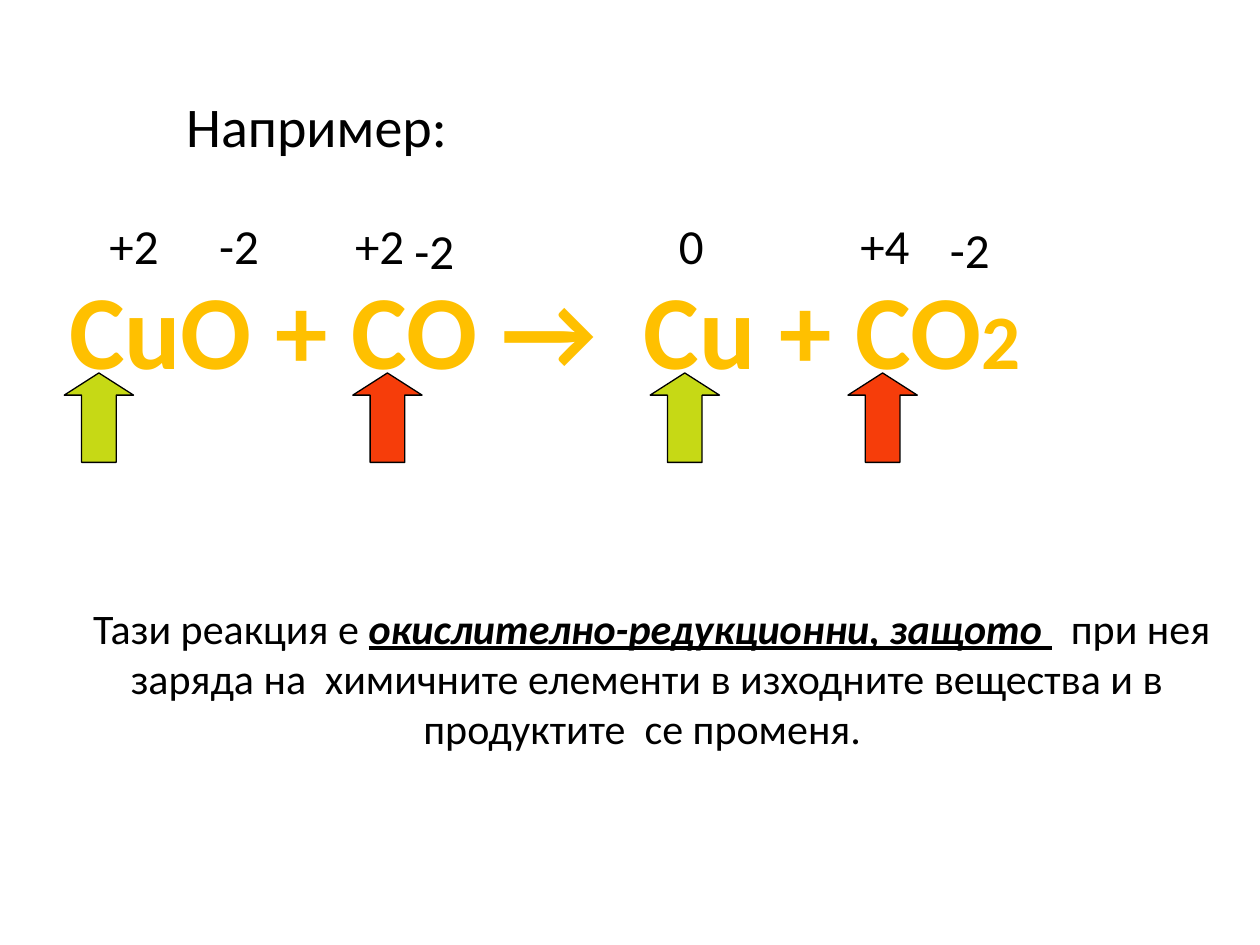
from pptx import Presentation
from pptx import util as u
from pptx.dml.color import RGBColor
from pptx.enum import shapes, text

BLACK, GOLD, GREEN, RED = "000000", "FFC000", "C6D915", "F63D0A"


def color(value):
    """Turn a hex string into a colour."""
    return RGBColor.from_string(value)


def inches(box):
    """Turn a box of numbers into lengths."""
    return [u.Inches(value) for value in box]


def add_text(slide, box, runs, size, ink=BLACK, wrap=False, align=text.PP_ALIGN.LEFT):
    """Place one paragraph made of (wording, format) runs in the box."""
    frame = slide.shapes.add_textbox(*inches(box)).text_frame
    frame.word_wrap = wrap
    frame.auto_size = text.MSO_AUTO_SIZE.SHAPE_TO_FIT_TEXT
    paragraph = frame.paragraphs[0]
    paragraph.alignment = align
    for wording, extra in runs:
        run = paragraph.add_run()
        run.text = wording
        run.font.color.rgb = color(ink)
        for name, value in {"name": "Calibri", "size": u.Pt(size), **extra}.items():
            setattr(run.font, name, value)


def add_equation(slide, box):
    """Write the reaction with its smaller index."""
    runs = [("CuO + CO →  Cu + CO", {"bold": True}),
            ("2", {"bold": True, "size": u.Pt(44)})]
    add_text(slide, box, runs, 60, GOLD)


def add_charges(slide, box):
    """Set the oxidation states along the row above the reaction."""
    left, top, height = box
    charges = [("+2", 0, 0, 0.65), ("-2", 0.87, 0, 0.55), ("+2", 1.95, 0, 0.65),
               ("-2", 2.42, 0.04, 0.55), ("0", 4.52, 0, 0.42),
               ("+4", 5.96, 0, 0.65), ("-2", 6.67, 0.03, 0.55)]
    for label, right, down, width in charges:
        add_text(slide, (left + right, top + down, width, height), [(label, {})], 28)


def add_arrow(slide, box, fill):
    """Place an outlined arrow pointing up at an element."""
    arrow = slide.shapes.add_shape(shapes.MSO_SHAPE.UP_ARROW, *inches(box))
    arrow.shadow.inherit = False
    arrow.adjustments[0], arrow.adjustments[1] = 0.5, 0.32
    arrow.fill.solid()
    arrow.fill.fore_color.rgb = color(fill)
    arrow.line.color.rgb = color(BLACK)
    arrow.line.width = u.Pt(0.75)


def add_conclusion(slide, box):
    """Write the centred explanation with its stressed term."""
    stress = {"bold": True, "italic": True, "underline": True}
    runs = [(" Тази реакция е ", {}),
            ("окислително-редукционни, защото ", stress),
            ("  при нея заряда на  химичните елементи в изходните вещества "
             "и в продуктите  се променя. ", {})]
    add_text(slide, box, runs, 24, wrap=True, align=text.PP_ALIGN.CENTER)


def main():
    """Build the slide and save it."""
    presentation = Presentation()
    presentation.slide_width, presentation.slide_height = inches((10, 7.5))
    slide = presentation.slides.add_slide(presentation.slide_layouts[6])
    add_equation(slide, (0.45, 2.05, 7.79, 1.11))
    add_charges(slide, (0.77, 1.66, 0.57))
    for left, fill in ((0.51, GREEN), (5.16, GREEN), (2.8, RED), (6.73, RED)):
        add_arrow(slide, (left, 2.96, 0.55, 0.71), fill)
    add_conclusion(slide, (0.53, 4.73, 9.21, 1.31))
    add_text(slide, (1.38, 0.68, 5.83, 0.64), [("Например:", {})], 32, wrap=True)
    presentation.save("out.pptx")


if __name__ == "__main__":
    main()
